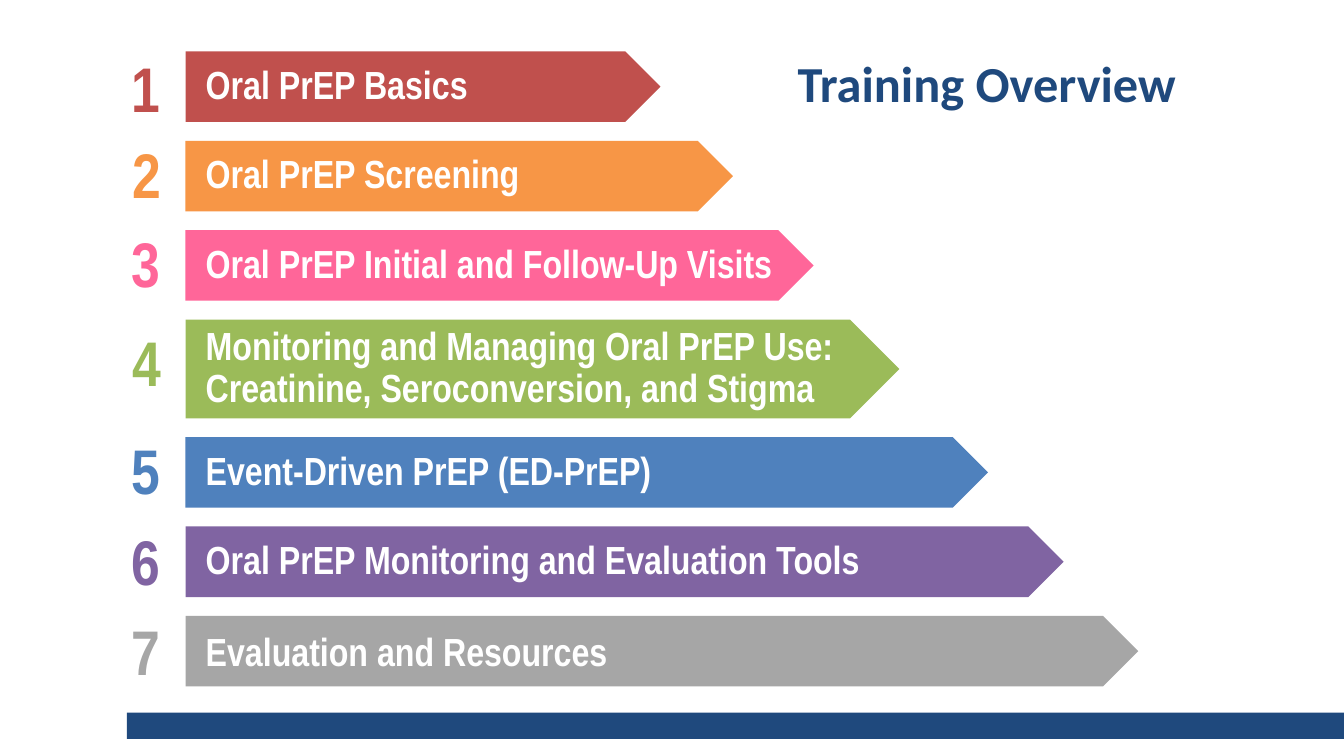
from pptx import Presentation
from pptx.dml.color import RGBColor
from pptx.enum.shapes import MSO_SHAPE as SHAPE
from pptx.enum.text import MSO_ANCHOR as ANCHOR, MSO_AUTO_SIZE as AUTO, PP_ALIGN as ALIGN
from pptx.util import Inches, Pt

NAVY = RGBColor(0x1F, 0x49, 0x7D)
WHITE = RGBColor(0xFF, 0xFF, 0xFF)
RED = RGBColor(0xC0, 0x50, 0x4D)
ORANGE = RGBColor(0xF7, 0x96, 0x46)
PINK = RGBColor(0xFF, 0x66, 0x99)
GREEN = RGBColor(0x9B, 0xBB, 0x59)
BLUE = RGBColor(0x4F, 0x81, 0xBD)
PURPLE = RGBColor(0x80, 0x64, 0xA2)
GRAY = RGBColor(0xA6, 0xA6, 0xA6)

# Module text (\v is a line break), colour, arrow width and height, line spacing
MODULES = [
    ("Oral PrEP Basics", RED, 4.71, 0.7, 0.9),
    ("Oral PrEP Screening", ORANGE, 5.43, 0.7, 0.9),
    ("Oral PrEP Initial and Follow-Up Visits", PINK, 6.23, 0.7, 0.9),
    ("Monitoring and Managing Oral PrEP Use:\vCreatinine, Seroconversion, and Stigma",
     GREEN, 7.08, 0.98, 0.9),
    ("Event-Driven PrEP (ED-PrEP)", BLUE, 7.96, 0.7, 0.9),
    ("Oral PrEP Monitoring and Evaluation Tools", PURPLE, 8.71, 0.7, 0.9),
    ("Evaluation and Resources", GRAY, 9.45, 0.7, 1.0),
]
# Left and top of each number
NUMBERS = [(1.21, 0.44), (1.22, 1.3), (1.21, 2.18), (1.22, 3.16),
           (1.21, 4.23), (1.21, 5.13), (1.21, 6.03)]
ARROWS_LEFT, ARROWS_TOP, ARROWS_BOTTOM = 1.84, 0.51, 6.81


def write(tf, text, size, font, color, spacing=1.0, **frame):
    """Fill a text frame with one bold, left-aligned paragraph."""
    for name, value in {"word_wrap": True, "auto_size": AUTO.NONE, **frame}.items():
        setattr(tf, name, value)
    p = tf.paragraphs[0]
    p.text = text
    p.alignment = ALIGN.LEFT
    p.line_spacing = spacing
    for r in p.runs:
        for name, value in {"size": Pt(size), "name": font, "bold": True}.items():
            setattr(r.font, name, value)
        r.font.color.rgb = color


def add_block(s, kind, left, top, width, height, color):
    sp = s.shapes.add_shape(kind, Inches(left), Inches(top), Inches(width), Inches(height))
    sp.shadow.inherit = False
    sp.fill.solid()
    sp.fill.fore_color.rgb = color
    sp.line.fill.background()
    return sp


def add_title(s, text):
    title = s.shapes.title
    place = {"left": 7.81, "top": 0.45, "width": 4.11, "height": 0.74}
    for name, value in place.items():
        setattr(title, name, Inches(value))
    title.fill.solid()
    title.fill.fore_color.rgb = WHITE
    write(title.text_frame, text, 36, "Calibri", NAVY, vertical_anchor=ANCHOR.MIDDLE)


def add_arrow(s, text, color, top, width, height, spacing):
    sp = add_block(s, SHAPE.PENTAGON, ARROWS_LEFT, top, width, height, color)
    write(sp.text_frame, text, 28, "Arial Narrow", WHITE, spacing,
          vertical_anchor=ANCHOR.MIDDLE, margin_left=Inches(0.2))


def add_number(s, number, color, left, top):
    box = s.shapes.add_textbox(Inches(left), Inches(top), Inches(0.51), Inches(0.86))
    write(box.text_frame, str(number), 45, "Arial Narrow", color,
          auto_size=AUTO.SHAPE_TO_FIT_TEXT)


def main():
    prs = Presentation()
    prs.slide_width, prs.slide_height = Inches(13.33), Inches(7.5)
    s = prs.slides.add_slide(prs.slide_layouts[5])

    # Title and footer bar
    add_block(s, SHAPE.RECTANGLE, 1.26, 7.07, 12.07, 0.26, NAVY)
    add_title(s, "Training Overview")

    # Numbered arrows, spread with equal gaps
    free = ARROWS_BOTTOM - ARROWS_TOP - sum(module[3] for module in MODULES)
    gap = free / (len(MODULES) - 1)
    top = ARROWS_TOP
    for number, (module, place) in enumerate(zip(MODULES, NUMBERS), 1):
        text, color, width, height, spacing = module
        add_arrow(s, text, color, top, width, height, spacing)
        add_number(s, number, color, *place)
        top += height + gap

    prs.save("out.pptx")


if __name__ == "__main__":
    main()
